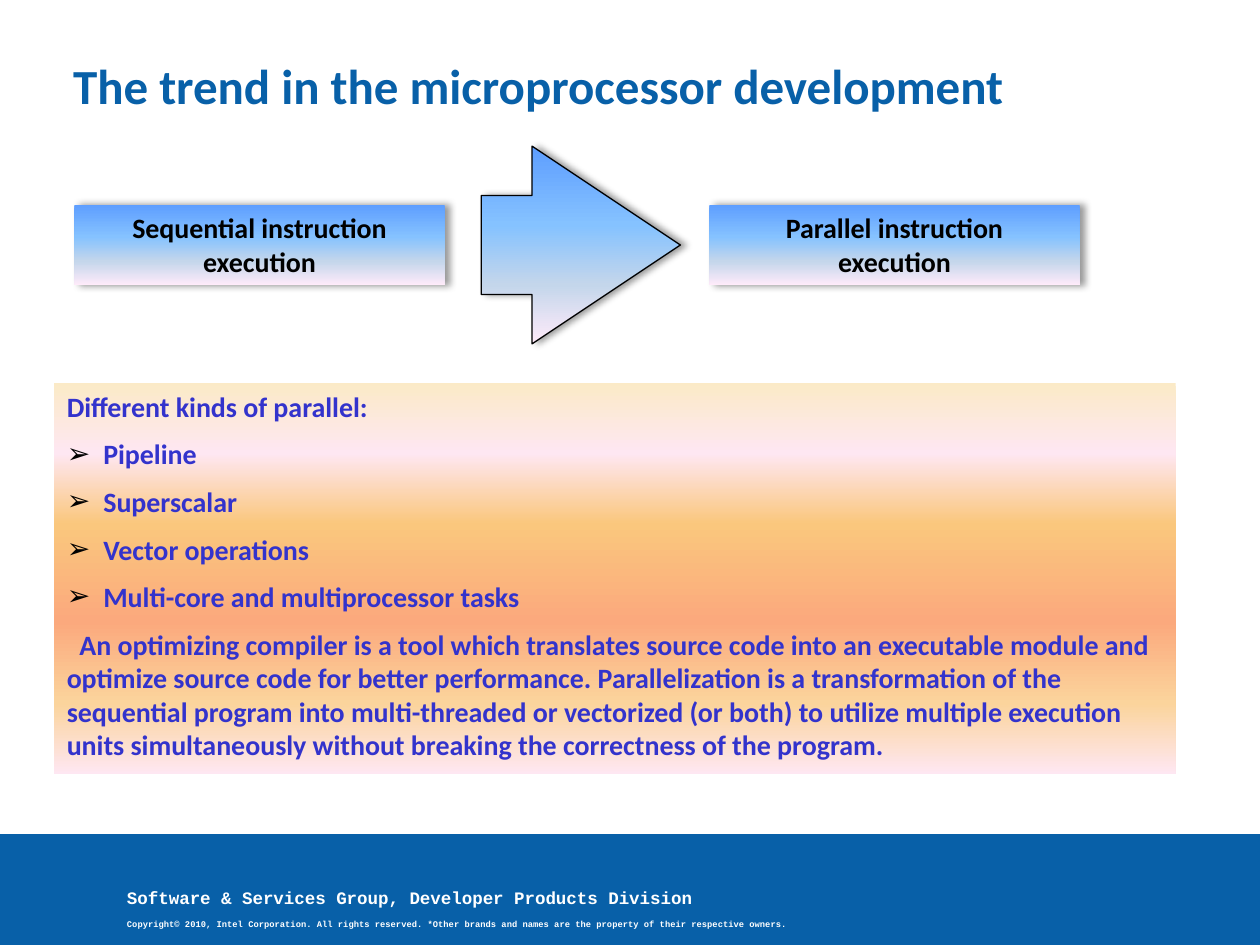
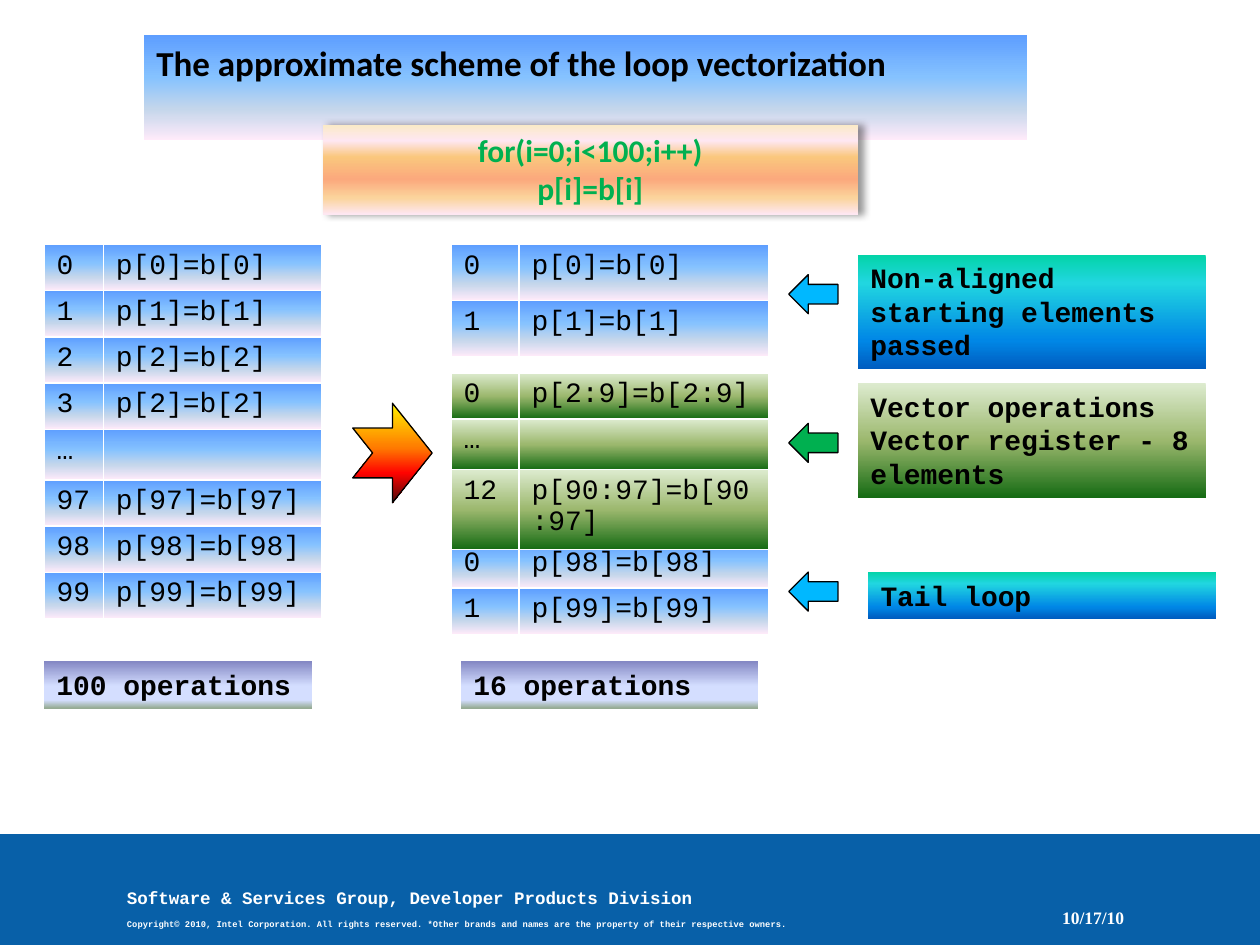
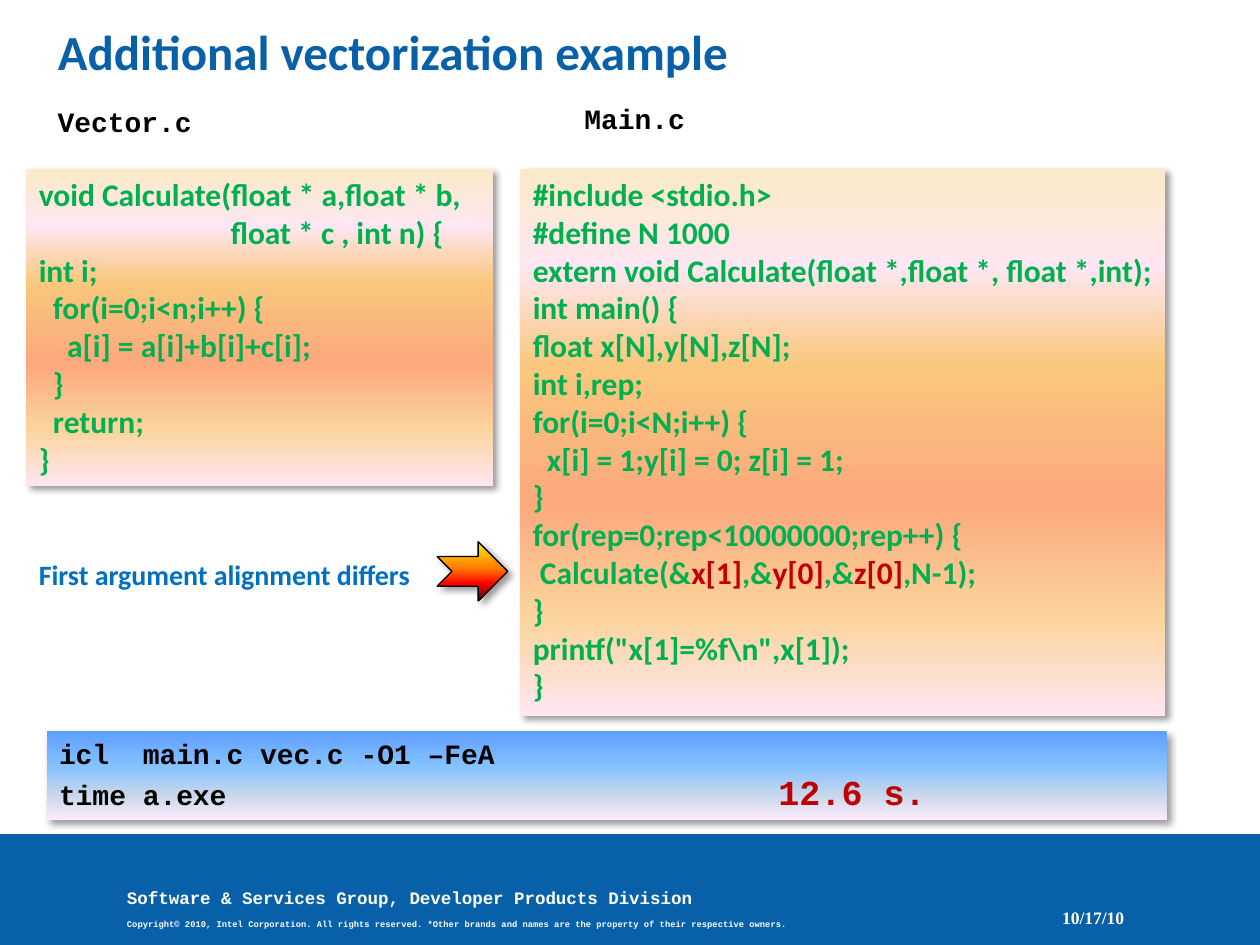
from lxml.etree import SubElement
from pptx import Presentation
from pptx.dml.color import RGBColor
from pptx.enum.shapes import MSO_SHAPE as Shape
from pptx.enum.text import MSO_ANCHOR as Anchor, MSO_AUTO_SIZE as AutoSize, PP_ALIGN as Align
from pptx.oxml.ns import qn
from pptx.util import Inches, Pt

BRAND = "0860A8"
BLACK = "000000"
WHITE = "FFFFFF"
GREEN = "00B050"
RED = "C00000"
SKY = [(0, "5E9EFF"), (40, "85C2FF"), (70, "C4D6EB"), (100, "FFEBFA")]
PEACH = [(0, "FBEAC7"), (18, "FEE7F2"), (36, "FAC77D"),
         (61, "FBA97D"), (82, "FBD49C"), (100, "FEE7F2")]
MOSS = [(0, "DDEBCF"), (50, "9CB86E"), (100, "156B13")]
OCEAN = [(0, "03D4A8"), (25, "21D6E0"), (75, "0087E6"), (100, "005CBF")]
FIRE = [(0, "FFF200"), (45, "FF7A00"), (70, "FF0300"), (100, "4D0808")]
LILAC = [(0, "8488C4"), (53, "D4DEFF"), (83, "D4DEFF"), (100, "96AB94")]


def text_style(name, size, color, bold=True):
    return {"name": name, "size": Pt(size), "bold": bold, "color": color}


TITLE = text_style("Calibri", 28, BRAND)
BANNER = text_style("Calibri", 20, BLACK)
LABEL = text_style("Calibri", 16, BLACK)
LIST = text_style("Calibri", 16, "3333CC")
NOTE = text_style("Calibri", 16, "0070C0")
CODE = text_style("Calibri", 18, GREEN)
MONO = text_style("Courier New", 16, BLACK)
CELL = text_style("Courier New", 16, BLACK, False)
GROUP = text_style("Courier New", 10, WHITE)
RIGHTS = text_style("Courier New", 5, WHITE)
DATE = text_style("Times New Roman", 10, WHITE)


def rgb(value):
    return RGBColor.from_string(value)


def set_all(target, values):
    for name, value in values.items():
        setattr(target, name, value)


def style_font(font, style):
    set_all(font, {key: value for key, value in style.items() if key != "color"})
    font.color.rgb = rgb(style["color"])


def write(frame, lines, style, align=Align.LEFT):
    for index, line in enumerate(lines):
        para = frame.add_paragraph() if index else frame.paragraphs[0]
        para.alignment = align
        for text, changes in [(line, {})] if isinstance(line, str) else line:
            span = para.add_run()
            span.text = text
            style_font(span.font, {**style, **changes})


def set_frame(frame, margins=(0.1, 0.05), anchor=Anchor.TOP, fit=AutoSize.SHAPE_TO_FIT_TEXT):
    side, edge = (Inches(value) for value in margins)
    set_all(frame, {"margin_left": side, "margin_right": side,
                    "margin_top": edge, "margin_bottom": edge,
                    "word_wrap": True, "vertical_anchor": anchor, "auto_size": fit})


def place(shape, box):
    set_all(shape, dict(zip(("left", "top", "width", "height"), map(Inches, box))))


def start_gradient(fill):
    fill.gradient()
    fill.gradient_angle = 270


def set_stops(element, stops):
    for stop_list in element.iter(qn("a:gsLst")):
        for old in list(stop_list):
            stop_list.remove(old)
        for position, color in stops:
            stop = SubElement(stop_list, qn("a:gs"), pos=str(position * 1000))
            SubElement(stop, qn("a:srgbClr"), val=color)


def paint(shape, fill):
    if isinstance(fill, str):
        shape.fill.solid()
        shape.fill.fore_color.rgb = rgb(fill)
    else:
        start_gradient(shape.fill)
        set_stops(shape.element, fill)


def cast_shadow(shape, angle):
    effects = next(shape.element.iter(qn("a:effectLst")))
    shadow = SubElement(effects, qn("a:outerShdw"), blurRad=str(Pt(4)), dist=str(Pt(3)),
                        dir=str(angle * 60000), algn="tl", rotWithShape="0")
    color = SubElement(shadow, qn("a:srgbClr"), val=BLACK)
    SubElement(color, qn("a:alpha"), val="40000")


def add_figure(page, kind, box, fill, shadow=None):
    shape = page.shapes.add_shape(kind, *map(Inches, box))
    shape.shadow.inherit = False
    paint(shape, fill)
    if shadow is not None:
        cast_shadow(shape, shadow)
    return shape


def add_panel(page, box, fill, lines, style, align=Align.LEFT, shadow=None):
    panel = add_figure(page, Shape.RECTANGLE, box, fill, shadow)
    panel.line.fill.background()
    set_frame(panel.text_frame)
    write(panel.text_frame, lines, style, align)
    return panel


def add_arrow(page, kind, box, fill, shadow=None):
    arrow = add_figure(page, kind, box, fill, shadow)
    arrow.line.color.rgb = rgb(BLACK)
    arrow.line.width = Pt(0.75)
    return arrow


def add_label(page, box, text, style):
    label = page.shapes.add_textbox(*map(Inches, box))
    set_frame(label.text_frame)
    write(label.text_frame, [text], style)


def set_title(page, box, text, style=TITLE, margins=(0, 0)):
    title = page.shapes.title
    place(title, box)
    set_frame(title.text_frame, margins)
    write(title.text_frame, [text], style)
    return title


def add_grid(page, box, columns, row_height, fill, rows):
    left, top = box
    holder = page.shapes.add_table(len(rows), len(columns), *map(
        Inches, (left, top, sum(columns), row_height * len(rows))))
    table = holder.table
    set_all(table, {"first_row": False, "horz_banding": False})
    for column, width in zip(table.columns, columns):
        column.width = Inches(width)
    for row, texts in zip(table.rows, rows):
        row.height = Inches(row_height)
        for cell, text in zip(row.cells, texts):
            start_gradient(cell.fill)
            write(cell.text_frame, [text], CELL)
    set_stops(holder.element, fill)


def add_master_band(deck, page):
    band = add_figure(page, Shape.RECTANGLE, (0, 6.62, 10, 0.88), BRAND)
    band.line.fill.background()
    credit = page.shapes.add_textbox(*map(Inches, (0.91, 6.96, 5.13, 0.45)))
    frame = credit.text_frame
    set_frame(frame, fit=AutoSize.NONE)
    frame.word_wrap = False
    write(frame, [
        [("Software & Services Group, Developer Products Division", GROUP)],
        [("Copyright© 2010, Intel Corporation. All rights reserved. "
          "*Other brands and names are the property of their respective owners.", RIGHTS)],
    ], GROUP)
    set_all(frame.paragraphs[0], {"line_spacing": 1.2})
    set_all(frame.paragraphs[1], {"line_spacing": 1.5, "space_before": Pt(3.1)})
    for shape in (band, credit):
        deck.slide_master.shapes.element.append(shape.element)


def add_date(page, box=(7.81, 7.1, 1.21, 0.4)):
    date = page.shapes.add_textbox(*map(Inches, box))
    set_frame(date.text_frame, anchor=Anchor.MIDDLE, fit=AutoSize.NONE)
    write(date.text_frame, ["10/17/10"], DATE, Align.RIGHT)
    date.text_frame.paragraphs[0].line_spacing = 0.8


def add_trend(page, box):
    left, top, width, height = box
    panel_width, panel_height = 2.94, 0.64
    panel_top = top + (height - panel_height) / 2
    panels = [(left, ["Sequential instruction execution"]),
              (left + width - panel_width, ["Parallel instruction", "execution"])]
    for panel_left, lines in panels:
        add_panel(page, (panel_left, panel_top, panel_width, panel_height),
                  SKY, lines, LABEL, Align.CENTER, 0)
    arrow = add_arrow(page, Shape.RIGHT_ARROW, (left + 3.23, top, 1.58, height), SKY, 0)
    arrow.adjustments[1] = 0.75


def set_indent(para, margin, first, bullet=None):
    props = para._p.get_or_add_pPr()
    props.set("marL", str(Inches(margin)))
    props.set("indent", str(Inches(first)))
    if bullet:
        color = SubElement(props, qn("a:buClr"))
        SubElement(color, qn("a:srgbClr"), val=BLACK)
        SubElement(props, qn("a:buFont"), typeface="Arial")
        SubElement(props, qn("a:buChar"), char=bullet)
    else:
        SubElement(props, qn("a:buNone"))


def add_kinds(page, box):
    body = page.placeholders[1]
    place(body, box)
    paint(body, PEACH)
    set_frame(body.text_frame)
    kinds = ["Pipeline", "Superscalar", "Vector operations",
             "Multi-core and multiprocessor tasks"]
    write(body.text_frame, [
        "Different kinds of parallel:", *kinds,
        "An optimizing compiler is a tool which translates source code into an executable "
        "module and optimize source code for better performance. Parallelization is a "
        "transformation of the sequential program into multi-threaded or vectorized (or both) "
        "to utilize multiple execution units simultaneously without breaking the correctness "
        "of the program.",
    ], LIST)
    intro, *items, closing = body.text_frame.paragraphs
    set_indent(intro, 0, 0)
    for item in items:
        set_indent(item, 0.29, -0.29, "➢")
    set_indent(closing, 0, 0.1)
    for index, para in enumerate(body.text_frame.paragraphs):
        para.space_before = Pt(8 if index else 0)


def add_scalar_loop(page, box):
    left, top = box
    steps = [("0", "p[0]=b[0]"), ("1", "p[1]=b[1]"), ("2", "p[2]=b[2]"), ("3", "p[2]=b[2]"),
             ("…", ""), *((str(n), f"p[{n}]=b[{n}]") for n in range(97, 100))]
    add_grid(page, box, (0.47, 1.73), 0.366, SKY, steps)
    add_panel(page, (left, top + 3.31, 2.13, 0.37), LILAC, ["100 operations"], MONO)


def add_vector_loop(page, box):
    left, top = box
    parts = [
        (0, 0.445, SKY, [("0", "p[0]=b[0]"), ("1", "p[1]=b[1]")]),
        (2.36, 0.366, SKY, [("0", "p[98]=b[98]"), ("1", "p[99]=b[99]")]),
        (1.02, 0.366, MOSS, [("0", "p[2:9]=b[2:9]"), ("…", ""), ("12", "p[90:97]=b[90:97]")]),
    ]
    for offset, row_height, fill, rows in parts:
        add_grid(page, (left, top + offset), (0.54, 1.98), row_height, fill, rows)
    add_panel(page, (left + 0.08, top + 3.31, 2.36, 0.37), LILAC, ["16 operations"], MONO)


def add_callouts(page, box):
    left, top = box
    callouts = [
        (0.55, -0.16, 0.91, OCEAN, "00B8FF", ["Non-aligned starting elements passed"]),
        (0.55, -0.32, 0.91, MOSS, GREEN, ["Vector operations", "Vector register - 8 elements"]),
        (0.63, 0, 0.37, OCEAN, "00B8FF", ["Tail loop"]),
    ]
    for index, (shift, rise, height, fill, color, lines) in enumerate(callouts):
        row_top = top + 1.18 * index
        add_arrow(page, Shape.LEFT_ARROW, (left, row_top, 0.39, 0.31), color)
        add_panel(page, (left + shift, row_top + rise, 2.76, height), fill, lines, MONO)


def add_source_file(page, name_box, code_box, name, lines):
    add_panel(page, code_box, PEACH, lines, CODE, shadow=45)
    add_label(page, name_box, name, MONO)


def add_console(page, box):
    hot = {"size": Pt(20), "color": RED}
    panel = add_panel(page, box, SKY, [
        "icl  main.c vec.c -O1 –FeA",
        [("time a.exe\t", {}), ("12.6 s.", hot)],
    ], MONO, shadow=45)
    props = panel.text_frame.paragraphs[1]._p.get_or_add_pPr()
    tabs = SubElement(props, qn("a:tabLst"))
    SubElement(tabs, qn("a:tab"), pos=str(Inches(5.71)), algn="l")


def build_trend_page(page):
    set_title(page, (0.58, 0.44, 8.92, 0.55), "The trend in the microprocessor development")
    add_trend(page, (0.59, 1.16, 7.98, 1.57))
    add_kinds(page, (0.43, 3.04, 8.9, 3.2))


def build_scheme_page(page):
    title = set_title(page, (1.14, 0.28, 7.01, 0.44),
                      "The approximate scheme of the loop vectorization", BANNER, (0.1, 0.05))
    paint(title, SKY)
    add_date(page)
    add_panel(page, (2.56, 0.99, 4.25, 0.71), PEACH,
              ["for(i=0;i<100;i++)", "p[i]=b[i]"], CODE, Align.CENTER, 0)
    add_scalar_loop(page, (0.35, 1.94))
    add_vector_loop(page, (3.58, 1.94))
    add_arrow(page, Shape.NOTCHED_RIGHT_ARROW, (2.8, 3.2, 0.63, 0.79), FIRE)
    add_callouts(page, (6.26, 2.18))


def build_example_page(page):
    set_title(page, (0.46, 0.17, 9.04, 0.51), "Additional vectorization example")
    add_date(page)
    add_source_file(page, (0.36, 0.78, 3.39, 0.37), (0.21, 1.34, 3.7, 2.52), "Vector.c", [
        "void Calculate(float * a,float * b,",
        "                           float * c , int n) {",
        "int i;",
        "  for(i=0;i<n;i++) {",
        "    a[i] = a[i]+b[i]+c[i];",
        "  }",
        "  return;",
        "}",
    ])
    red = {"color": RED}
    add_source_file(page, (4.54, 0.76, 2.13, 0.37), (4.13, 1.34, 5.12, 4.34), "Main.c", [
        "#include <stdio.h>",
        "#define N 1000",
        "extern void Calculate(float *,float *, float *,int);",
        "int main() {",
        "float x[N],y[N],z[N];",
        "int i,rep;",
        "for(i=0;i<N;i++) {",
        "  x[i] = 1;y[i] = 0; z[i] = 1;",
        "}",
        "for(rep=0;rep<10000000;rep++) {",
        [(" Calculate(&", {}), ("x[1]", red), (",&", {}), ("y[0]", red),
         (",&", {}), ("z[0]", red), (",N-1);", {})],
        "}",
        'printf("x[1]=%f\\n",x[1]);',
        "}",
    ])
    add_arrow(page, Shape.NOTCHED_RIGHT_ARROW, (3.47, 4.3, 0.56, 0.47), FIRE, 45)
    add_label(page, (0.21, 4.38, 3.26, 0.37), "First argument alignment differs", NOTE)
    add_console(page, (0.37, 5.8, 8.89, 0.71))


def main():
    deck = Presentation()
    set_all(deck, {"slide_width": Inches(10), "slide_height": Inches(7.5)})
    builders = [(1, build_trend_page), (5, build_scheme_page), (5, build_example_page)]
    for layout, build in builders:
        build(deck.slides.add_slide(deck.slide_layouts[layout]))
    add_master_band(deck, deck.slides[0])
    deck.save("out.pptx")


if __name__ == "__main__":
    main()
